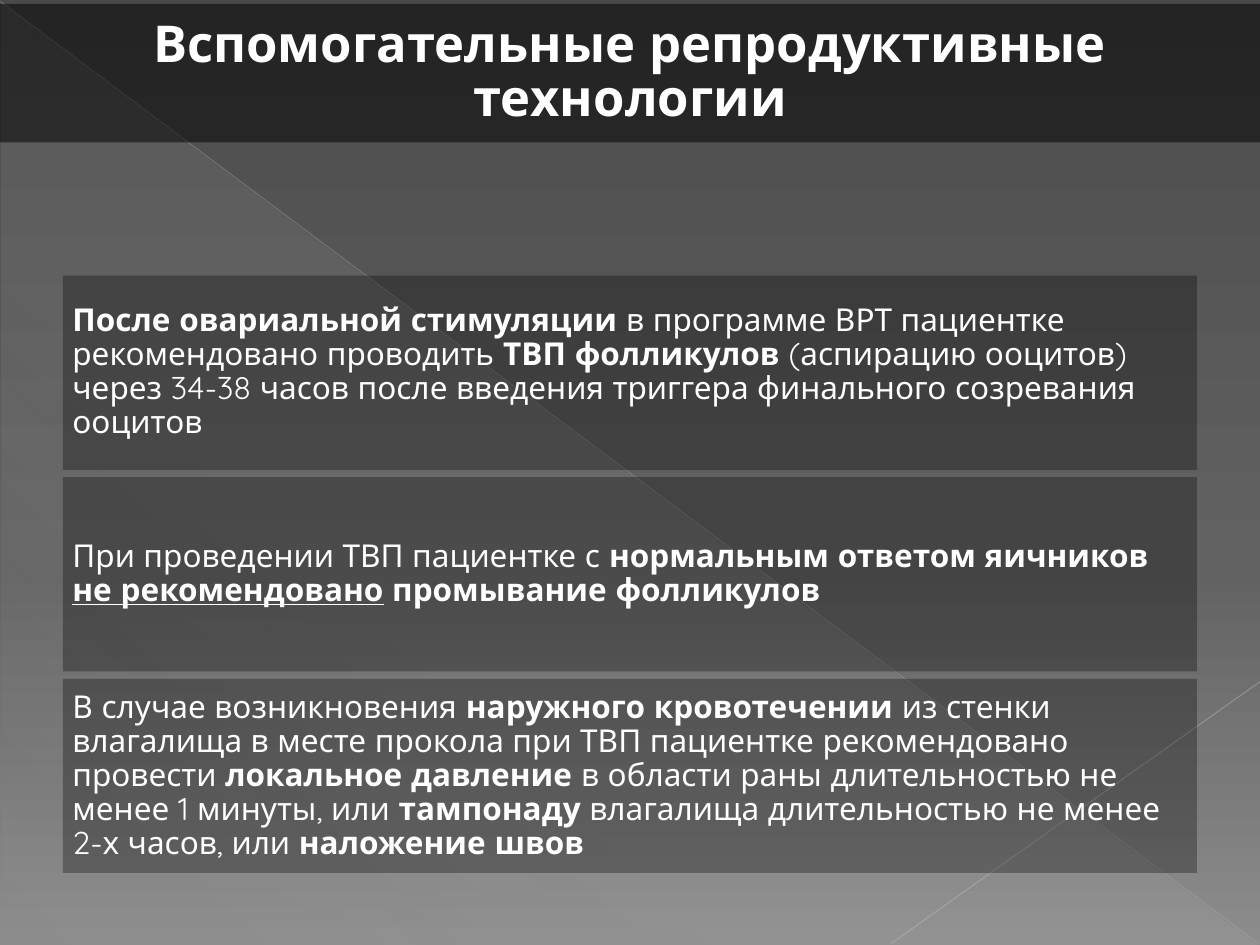
import pptx
import pptx.util
import pptx.dml.color
import pptx.enum.shapes
import pptx.enum.text
import pptx.oxml
import pptx.oxml.ns
import lxml.etree

Pt = pptx.util.Pt
RGBColor = pptx.dml.color.RGBColor
MSO_SHAPE = pptx.enum.shapes.MSO_SHAPE
PP_ALIGN = pptx.enum.text.PP_ALIGN
qn = pptx.oxml.ns.qn

WHITE = RGBColor(0xFF, 0xFF, 0xFF)
BLACK = RGBColor(0x00, 0x00, 0x00)
DARK = RGBColor(0x4A, 0x4A, 0x4A)
MID = RGBColor(0x62, 0x62, 0x62)
PALE = RGBColor(0x8C, 0x8C, 0x8C)
SHEEN = RGBColor(0xD2, 0xD2, 0xD2)
LONG_LINE = RGBColor(0xBF, 0xBF, 0xBF)
SHORT_LINE = RGBColor(0xC6, 0xC6, 0xC6)
FONT = "Quicksand"

TITLE = [("Вспомогательные репродуктивные технологии", "b")]
RECOMMENDATIONS = [
    [
        ("После овариальной стимуляции ", "b"),
        ("в программе ВРТ пациентке рекомендовано проводить ", ""),
        ("ТВП фолликулов ", "b"),
        ("(аспирацию ооцитов) через 34-38 часов после введения триггера "
         "финального созревания ооцитов", ""),
    ],
    [
        ("При проведении ТВП пациентке с ", ""),
        ("нормальным ответом яичников ", "b"),
        ("не рекомендовано", "bu"),
        (" ", ""),
        ("промывание фолликулов", "b"),
    ],
    [
        ("В случае возникновения ", ""),
        ("наружного кровотечении ", "b"),
        ("из стенки влагалища в месте прокола при ТВП пациентке "
         "рекомендовано провести ", ""),
        ("локальное давление", "b"),
        (" в области раны длительностью не менее 1 минуты, или ", ""),
        ("тампонаду", "b"),
        (" влагалища длительностью не менее 2-х часов, или ", ""),
        ("наложение швов", "b"),
    ],
]
BACKGROUND_STOPS = [(0, DARK, 100), (60, MID, 100), (100, PALE, 100)]
SHEEN_STOPS = [(0, SHEEN, 10), (70, SHEEN, 8), (100, SHEEN, 1)]
LINES = [
    ((0, 0.72), (719.28, 539.28), LONG_LINE, 0.39, 35),
    ((720, 389.52), (509.04, 539.28), SHORT_LINE, 0.47, 45),
]

SLIDE_W, SLIDE_H = 720, 540
CARD_X, CARD_Y, CARD_W, CARD_H, CARD_GAP = 36, 157.5, 648, 111, 4.2


def set_opacity(color, percent):
    lxml.etree.SubElement(color, qn("a:alpha"), val=str(percent * 1000))


def set_gradient(fill, stops, angle):
    fill.gradient()
    grad = fill._fill._gradFill
    for child in list(grad):
        grad.remove(child)
    gs_list = lxml.etree.SubElement(grad, qn("a:gsLst"))
    for position, rgb, opacity in stops:
        gs = lxml.etree.SubElement(gs_list, qn("a:gs"), pos=str(position * 1000))
        color = lxml.etree.SubElement(gs, qn("a:srgbClr"), val=str(rgb))
        set_opacity(color, opacity)
    lxml.etree.SubElement(grad, qn("a:lin"), ang=str(angle * 60000), scaled="0")


def add_shape(s, kind, x, y, w, h):
    sp = s.shapes.add_shape(kind, Pt(x), Pt(y), Pt(w), Pt(h))
    sp.shadow.inherit = False
    sp.line.fill.background()
    return sp


def add_panel(s, box, opacity, runs, size, inset, align):
    sp = add_shape(s, MSO_SHAPE.RECTANGLE, *box)
    sp.fill.solid()
    sp.fill.fore_color.rgb = BLACK
    set_opacity(sp.fill._xPr.find(".//" + qn("a:srgbClr")), opacity)
    tf = sp.text_frame
    tf.word_wrap = True
    tf.vertical_anchor = pptx.enum.text.MSO_ANCHOR.MIDDLE
    tf.margin_left = tf.margin_right = tf.margin_top = tf.margin_bottom = Pt(inset)
    p = tf.paragraphs[0]
    p.alignment = align
    p.line_spacing = 0.9
    for text, style in runs:
        r = p.add_run()
        r.text = text
        r.font.name = FONT
        r.font.size = Pt(size)
        r.font.bold = "b" in style
        r.font.underline = "u" in style
        r.font.color.rgb = WHITE


def add_line(s, start, end, rgb, width, opacity):
    line = s.shapes.add_connector(
        pptx.enum.shapes.MSO_CONNECTOR.STRAIGHT, *map(Pt, start + end))
    line.line.width = Pt(width)
    line.line.color.rgb = rgb
    sp_pr = line._element.spPr
    set_opacity(sp_pr.find(".//" + qn("a:srgbClr")), opacity)
    lxml.etree.SubElement(sp_pr, qn("a:effectLst"))


def main():
    prs = pptx.Presentation()
    prs.slide_width, prs.slide_height = Pt(SLIDE_W), Pt(SLIDE_H)
    s = prs.slides.add_slide(prs.slide_layouts[6])
    set_gradient(s.background.fill, BACKGROUND_STOPS, 90)

    sheen = add_shape(s, MSO_SHAPE.RIGHT_TRIANGLE, 0.72, 1.44, 718.56, 538.56)
    set_gradient(sheen.fill, SHEEN_STOPS, 133)
    for line in LINES:
        add_line(s, *line)

    for i, runs in enumerate(RECOMMENDATIONS):
        box = (CARD_X, CARD_Y + i * (CARD_H + CARD_GAP), CARD_W, CARD_H)
        add_panel(s, box, 30, runs, 18, 5.4, PP_ALIGN.LEFT)
    add_panel(s, (0, 2.2, SLIDE_W, 79.2), 50, TITLE, 29, 8.7, PP_ALIGN.CENTER)

    prs.save("out.pptx")


if __name__ == "__main__":
    main()
